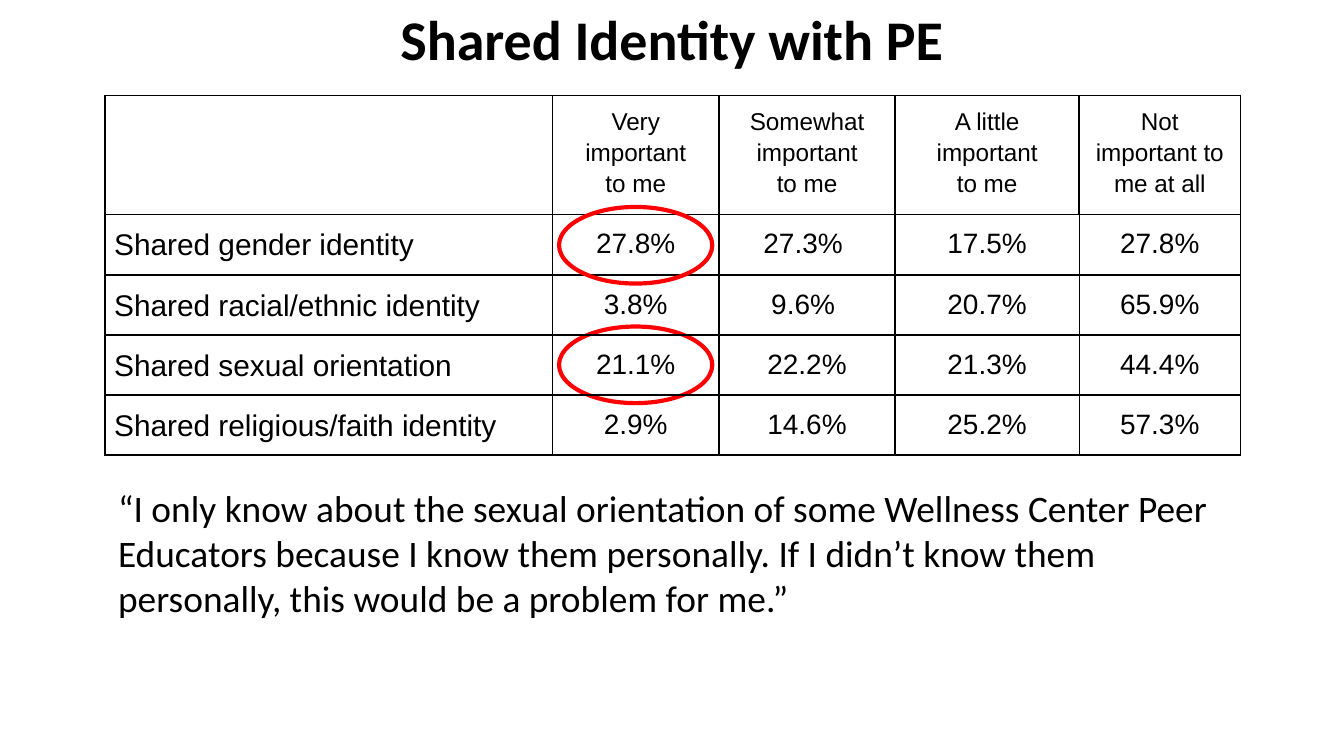
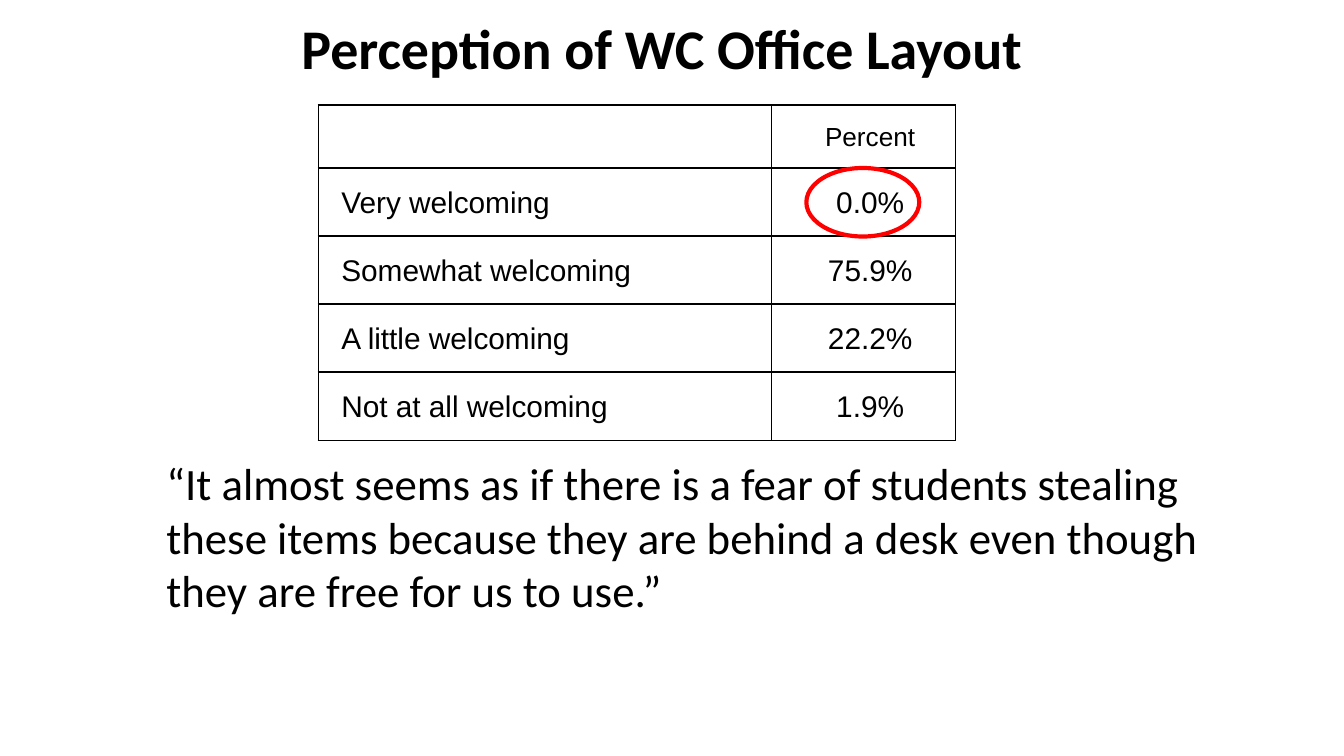
from lxml import etree
from pptx import Presentation
from pptx.dml.color import RGBColor
from pptx.enum.shapes import MSO_SHAPE
from pptx.enum.text import MSO_ANCHOR, PP_ALIGN
from pptx.oxml.ns import qn
from pptx.util import Inches, Pt

LEFT, CENTER = PP_ALIGN.LEFT, PP_ALIGN.CENTER
TOP, MIDDLE = MSO_ANCHOR.TOP, MSO_ANCHOR.MIDDLE
OVAL, RECTANGLE = MSO_SHAPE.OVAL, MSO_SHAPE.RECTANGLE

# Square grid: 100 columns across a 10 inch page
COLUMNS, ROWS = 100, 56.25
BLACK, WHITE, RED = "000000", "FFFFFF", "FF0000"
TITLE_FORMAT = {"name": "Calibri", "size": Pt(30), "bold": True}
LINE_SPACING = 1.15
RULE = 1


def color(value):
    return RGBColor.from_string(value)


def grid(*units):
    """Turn grid units into lengths."""
    return [Inches(unit / 10) for unit in units]


def write(para, text, formats):
    span = para.add_run()
    span.text = text
    for name, value in formats.items():
        setattr(span.font, name, value)
    span.font.color.rgb = color(BLACK)


def fill_box(box, text, formats, align=LEFT, anchor=TOP):
    frame = box.text_frame
    frame.word_wrap = True
    frame.vertical_anchor = anchor
    for side in ("left", "top", "right", "bottom"):
        setattr(frame, f"margin_{side}", Inches(0.1))
    para = frame.paragraphs[0]
    para.alignment = align
    write(para, text, formats)


def add_title(page, text, width, height):
    box = page.shapes.add_textbox(*grid(0, 0, width, height))
    fill_box(box, text, TITLE_FORMAT, CENTER, MIDDLE)


def add_quote(page, text, place, size):
    box = page.shapes.add_shape(RECTANGLE, *grid(*place))
    box.shadow.inherit = False
    box.fill.solid()
    box.fill.fore_color.rgb = color(WHITE)
    box.line.fill.background()
    fill_box(box, text, {"name": "Calibri", "size": Pt(size)})


def add_ring(page, *place):
    ring = page.shapes.add_shape(OVAL, *grid(*place))
    ring.shadow.inherit = False
    ring.fill.background()
    ring.line.color.rgb = color(RED)
    ring.line.width = Pt(2.25)


def set_borders(cell, widths):
    """Draw the left, right, top and bottom borders, ahead of the fill."""
    properties = cell._tc.get_or_add_tcPr()
    for place, (side, width) in enumerate(zip("LRTB", widths)):
        line = etree.Element(qn(f"a:ln{side}"), w=str(Pt(width)))
        solid = etree.SubElement(line, qn("a:solidFill"))
        etree.SubElement(solid, qn("a:srgbClr"), val=BLACK)
        properties.insert(place, line)


def write_cell(cell, text, size, align, padding, indent):
    cell.margin_left = cell.margin_right = Inches(0.07)
    cell.margin_top = cell.margin_bottom = Inches(padding)
    frame = cell.text_frame
    for place, line in enumerate(text.split("\n")):
        para = frame.add_paragraph() if place else frame.paragraphs[0]
        para.alignment = align
        para.line_spacing = LINE_SPACING
        if indent:
            properties = para._p.get_or_add_pPr()
            properties.set("marL", str(Inches(indent)))
            properties.set("indent", "0")
        write(para, line, {"name": "Arial", "size": Pt(size)})


def add_grid_table(page, left, top, widths, heights, rows, sizes,
                   padding=0.07, indent=0, inner_rule=RULE):
    """Sizes are the point sizes of header, row labels and values."""
    header_size, label_size, value_size = sizes
    place = grid(left, top, sum(widths), sum(heights))
    table = page.shapes.add_table(len(rows), len(widths), *place).table
    table.first_row = table.horz_banding = False
    for column, width in zip(table.columns, grid(*widths)):
        column.width = width
    for row, height in zip(table.rows, grid(*heights)):
        row.height = height
    last = len(widths) - 1
    for r, texts in enumerate(rows):
        for c, text in enumerate(texts):
            cell = table.cell(r, c)
            cell.fill.background()
            if text:
                size = header_size if r == 0 else value_size if c else label_size
                write_cell(cell, text, size, CENTER if c else LEFT, padding, indent)
            inner = inner_rule if r else RULE
            set_borders(cell, (inner if c else RULE,
                               inner if c < last else RULE, RULE, RULE))


def build_identity_page(page):
    add_title(page, "Shared Identity with PE", COLUMNS, 5.7)
    ring_left, ring_width, ring_height = 41.6, 11.4, 5.7
    add_ring(page, ring_left, 24.3, ring_width, ring_height)
    add_quote(page, "“I only know about the sexual orientation of some Wellness "
              "Center Peer Educators because I know them personally. If I didn’t "
              "know them personally, this would be a problem for me.”",
              (7.8, 35.1, 86.5, 13.1), 20)
    rows = [
        ("", "Very important\nto me", "Somewhat important\nto me",
         "A little important\nto me", "Not important to me at all"),
        ("Shared gender identity", "27.8%", "27.3% ", "17.5%", "27.8%"),
        ("Shared racial/ethnic identity", "3.8%", "9.6% ", "20.7%", "65.9%"),
        ("Shared sexual orientation", "21.1%", "22.2%", "21.3%", "44.4%"),
        ("Shared religious/faith identity", "2.9%", "14.6%", "25.2%", "57.3%"),
    ]
    add_grid_table(page, 7.8, 7.1, (33.3, 12.4, 13.1, 13.7, 12),
                   (8.8, 4.5, 4.1, 4.1, 4.2), rows, (13, 16, 15), inner_rule=0.75)
    add_ring(page, ring_left, 15.4, ring_width, ring_height)


def build_layout_page(page):
    add_title(page, "Perception of WC Office Layout", 98.5, 7)
    rows = [
        ("", "Percent"),
        ("Very welcoming", "0.0%"),
        ("Somewhat welcoming", "75.9%"),
        ("A little welcoming", "22.2%"),
        ("Not at all welcoming", "1.9%"),
    ]
    add_grid_table(page, 23.7, 7.8, (33.7, 13.7), [4.7] + [4.9] * 4, rows,
                   (14, 16, 16), padding=0.1, indent=0.1)
    add_quote(page, "“It almost seems as if there is a fear of students stealing "
              "these items because they are behind a desk even though they are "
              "free for us to use.”", (11.4, 32.9, 83.2, 14.3), 24)
    add_ring(page, 60, 12.5, 8.4, 5.1)


def main():
    deck = Presentation()
    deck.slide_width, deck.slide_height = grid(COLUMNS, ROWS)
    blank = deck.slide_layouts[6]
    for build in (build_identity_page, build_layout_page):
        build(deck.slides.add_slide(blank))
    deck.save("out.pptx")


if __name__ == "__main__":
    main()
